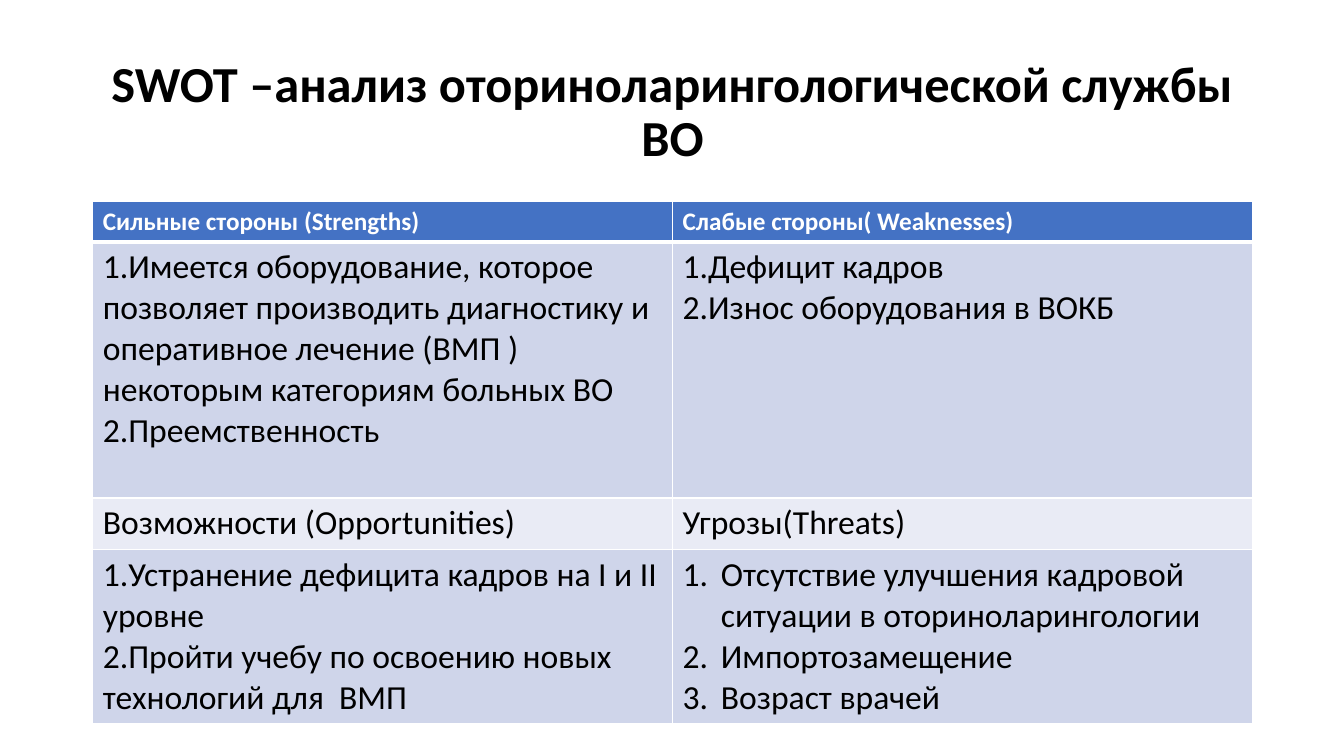
from pptx import Presentation
from pptx.dml.color import RGBColor
from pptx.enum.text import MSO_ANCHOR as Anchor, PP_ALIGN as Align
from pptx.oxml.ns import qn
from pptx.util import Inches, Pt
from lxml.etree import SubElement

FONT = "Calibri"
HEADER, DARK_BAND, LIGHT_BAND = "4472C4", "CFD5EA", "E9EBF5"
ROW_HEIGHTS = [0.4, 2.54, 0.51, 1.73]
ROW_FILLS = [HEADER, DARK_BAND, LIGHT_BAND, DARK_BAND]
SWOT = [
    [["Сильные стороны (Strengths)"], ["Слабые стороны( Weaknesses)"]],
    [["1.Имеется оборудование, которое позволяет производить диагностику "
      "и оперативное лечение (ВМП ) некоторым категориям больных ВО",
      "2.Преемственность"],
     ["1.Дефицит кадров", "2.Износ оборудования в ВОКБ"]],
    [["Возможности (Opportunities)"], ["Угрозы(Threats)"]],
    [["1.Устранение дефицита кадров на I и II уровне",
      "2.Пройти учебу по освоению новых технологий для  ВМП"],
     ["Отсутствие улучшения кадровой ситуации в оториноларингологии",
      "Импортозамещение", "Возраст врачей"]],
]
NUMBERED_CELL = (3, 1)


def rgb(color):
    return RGBColor.from_string(color)


def number_paragraph(p, indent=0.38):
    pPr = p._p.get_or_add_pPr()
    pPr.set("marL", str(Inches(indent)))
    pPr.set("indent", str(-Inches(indent)))
    SubElement(pPr, qn("a:buFont"), typeface="+mj-lt")
    SubElement(pPr, qn("a:buAutoNum"), type="arabicPeriod")


def write_text(tf, lines, size=24, color="000000", bold=False,
               align=Align.LEFT, spacing=1.0, numbered=False):
    tf.word_wrap = True
    for i, line in enumerate(lines):
        p = tf.paragraphs[0] if i == 0 else tf.add_paragraph()
        p.alignment = align
        p.line_spacing = spacing
        if numbered:
            number_paragraph(p)
        r = p.add_run()
        r.text = line
        r.font.name = FONT
        r.font.size = Pt(size)
        r.font.bold = bold
        r.font.color.rgb = rgb(color)


def set_borders(cell, bottom=1):
    tcPr = cell._tc.get_or_add_tcPr()
    for side, width in (("L", 1), ("R", 1), ("T", 1), ("B", bottom)):
        ln = SubElement(tcPr, qn(f"a:ln{side}"), w=str(Pt(width)))
        fill = SubElement(ln, qn("a:solidFill"))
        SubElement(fill, qn("a:srgbClr"), val="FFFFFF")


def add_title(s, x, y, w, h):
    tf = s.shapes.add_textbox(Inches(x), Inches(y), Inches(w), Inches(h)).text_frame
    tf.vertical_anchor = Anchor.MIDDLE
    write_text(tf, ["SWOT –анализ оториноларингологической службы ВО"],
               size=36, bold=True, align=Align.CENTER, spacing=0.9)


def add_swot_table(s, x, y, w):
    table = s.shapes.add_table(len(SWOT), 2, Inches(x), Inches(y), Inches(w),
                               Inches(sum(ROW_HEIGHTS))).table
    for i, cells in enumerate(SWOT):
        table.rows[i].height = Inches(ROW_HEIGHTS[i])
        is_header = i == 0
        for j, lines in enumerate(cells):
            cell = table.cell(i, j)
            # The header is closed by a thick line, shared with the row below
            set_borders(cell, bottom=3 if is_header else 1)
            if i == 1:
                cell._tc.tcPr.find(qn("a:lnT")).set("w", str(Pt(3)))
            cell.fill.solid()
            cell.fill.fore_color.rgb = rgb(ROW_FILLS[i])
            write_text(cell.text_frame, lines,
                       size=18 if is_header else 24,
                       color="FFFFFF" if is_header else "000000",
                       bold=is_header, numbered=(i, j) == NUMBERED_CELL)


def main():
    prs = Presentation()
    prs.slide_width, prs.slide_height = Inches(13.33), Inches(7.5)
    s = prs.slides.add_slide(prs.slide_layouts[6])
    add_title(s, 0.92, 0.4, 11.5, 1.45)
    add_swot_table(s, 0.92, 2, 11.5)
    prs.save("out.pptx")


if __name__ == "__main__":
    main()
